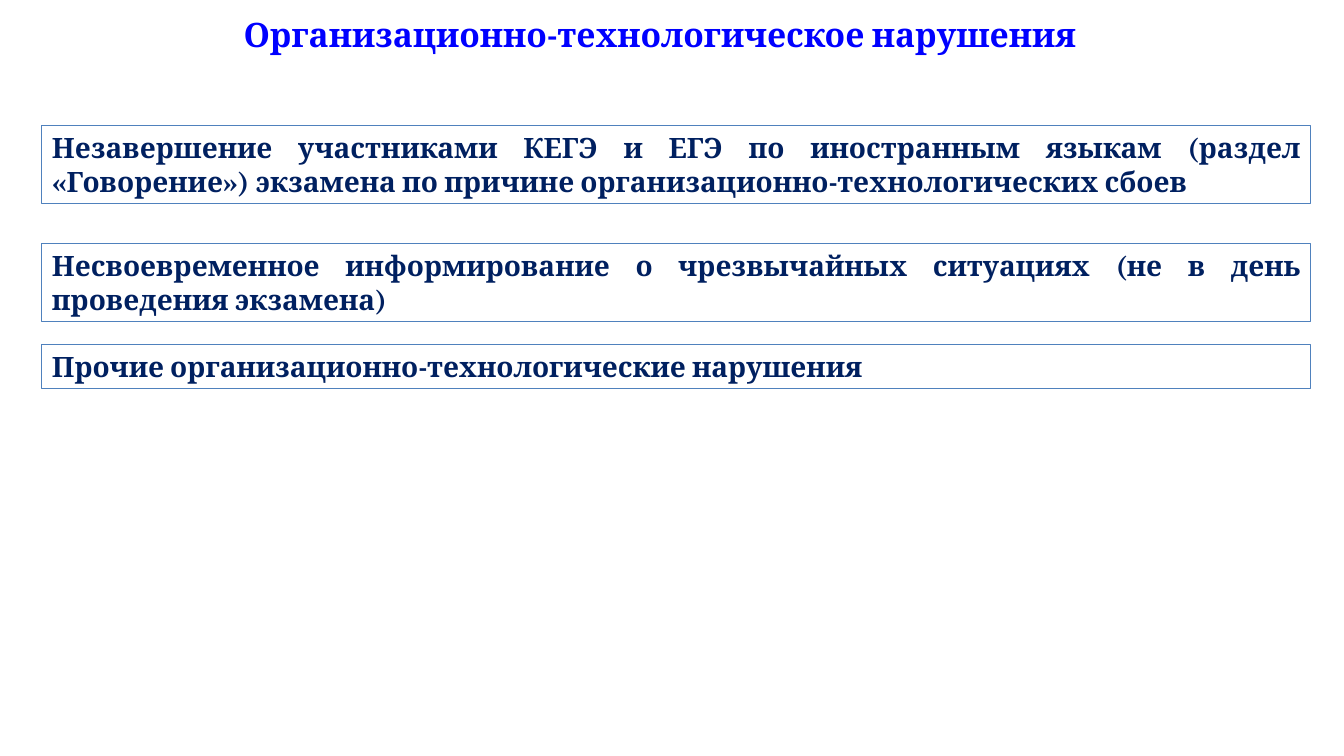
from pptx import Presentation
from pptx.dml.color import RGBColor
from pptx.enum.shapes import MSO_SHAPE
from pptx.enum.text import MSO_ANCHOR, MSO_AUTO_SIZE, PP_ALIGN
from pptx.util import Pt

RECT = MSO_SHAPE.RECTANGLE
TOP, MIDDLE = MSO_ANCHOR.TOP, MSO_ANCHOR.MIDDLE
CENTER, JUSTIFY = PP_ALIGN.CENTER, PP_ALIGN.JUSTIFY
NO_FIT, GROW = MSO_AUTO_SIZE.NONE, MSO_AUTO_SIZE.SHAPE_TO_FIT_TEXT
TITLE_ONLY = 5
FONT = "Cambria"
BLUE, NAVY, BORDER = "0000FF", "002060", "4F81BD"

# Top, height and wording of each violation box
VIOLATIONS = [
    (120, 74, "Незавершение участниками КЕГЭ и ЕГЭ по иностранным языкам "
              "(раздел «Говорение») экзамена по причине "
              "организационно-технологических сбоев"),
    (232, 74, "Несвоевременное информирование о чрезвычайных ситуациях "
              "(не в день проведения экзамена)"),
    (328, 42, "Прочие организационно-технологические нарушения"),
]


def px(n):
    return n * 9525


def color(value):
    return RGBColor.from_string(value)


def write(sp, text, size, hex_color, align, anchor, fit):
    tf = sp.text_frame
    tf.text = text
    tf.word_wrap = True
    tf.auto_size = fit
    tf.vertical_anchor = anchor
    p = tf.paragraphs[0]
    p.alignment = align
    font = p.runs[0].font
    font.name, font.size, font.bold = FONT, Pt(size), True
    font.color.rgb = color(hex_color)


def add_title(s, text):
    sp = s.shapes.title
    sp.left, sp.top, sp.width, sp.height = px(24), px(0), px(1216), px(64)
    write(sp, text, 24, BLUE, CENTER, MIDDLE, NO_FIT)


def add_box(s, top, height, text):
    sp = s.shapes.add_shape(RECT, px(40), px(top), px(1208), px(height))
    sp.shadow.inherit = False
    sp.fill.background()
    sp.line.color.rgb = color(BORDER)
    sp.line.width = Pt(0.75)
    write(sp, text, 20, NAVY, JUSTIFY, TOP, GROW)


def main():
    prs = Presentation()
    prs.slide_width, prs.slide_height = px(1280), px(720)
    s = prs.slides.add_slide(prs.slide_layouts[TITLE_ONLY])

    # Heading
    add_title(s, "Организационно-технологическое нарушения ")

    # Outlined list of violations
    for top, height, text in VIOLATIONS:
        add_box(s, top, height, text)

    prs.save("out.pptx")


if __name__ == "__main__":
    main()
